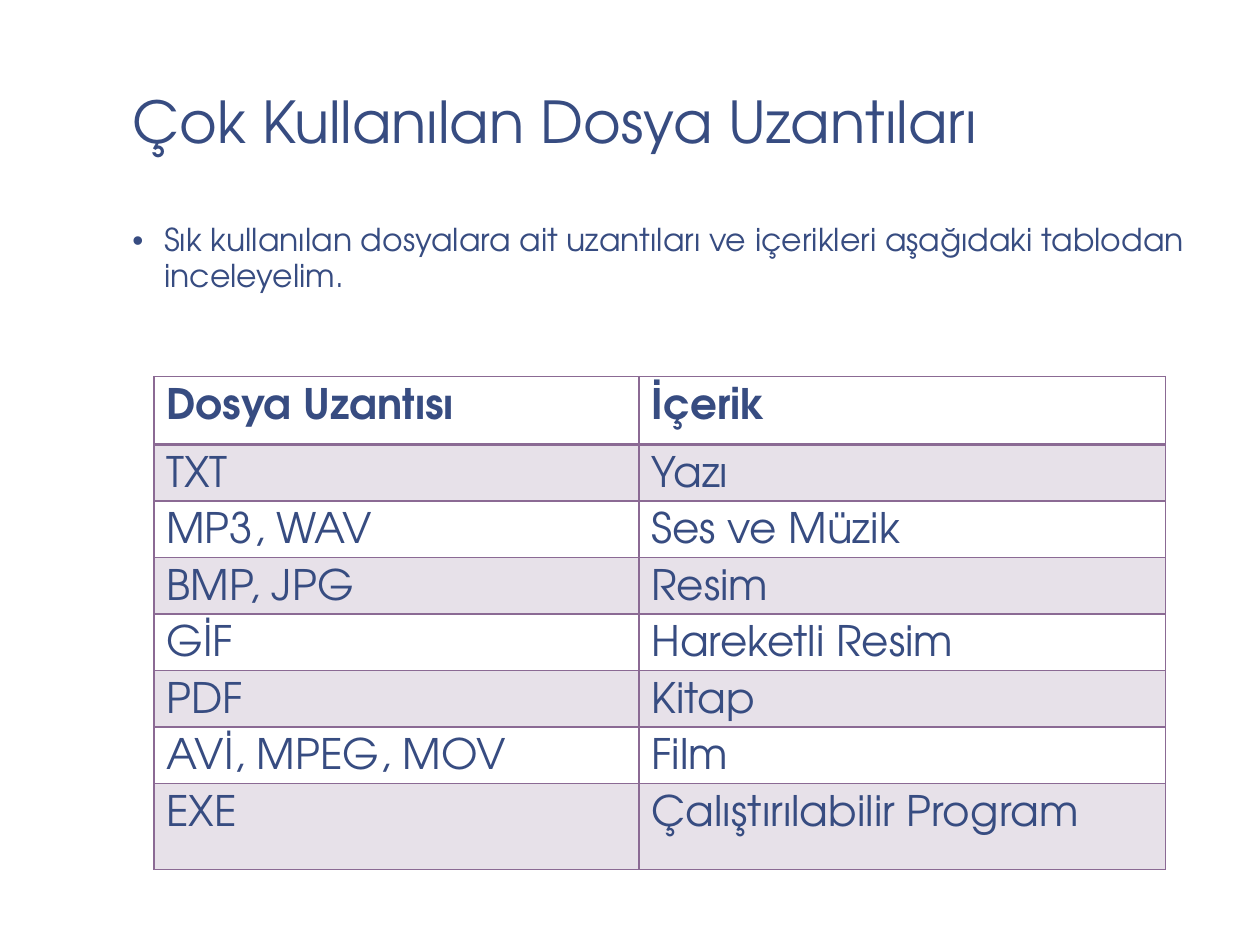
import pptx
import pptx.util
import pptx.dml.color
import pptx.enum.text
import pptx.oxml.ns
from lxml import etree
from pptx.util import Cm, Pt

TITLE = "Çok Kullanılan Dosya Uzantıları"
INTRO = "Sık kullanılan dosyalara ait uzantıları ve içerikleri aşağıdaki tablodan inceleyelim."
ROWS = [
    ("Dosya Uzantısı", "İçerik"),
    ("TXT", "Yazı"),
    ("MP3, WAV", "Ses ve Müzik"),
    ("BMP, JPG", "Resim"),
    ("GİF", "Hareketli Resim"),
    ("PDF", "Kitap"),
    ("AVİ, MPEG, MOV", "Film"),
    ("EXE", "Çalıştırılabilir Program"),
]
COL_WIDTHS = [9.78, 10.62]
ROW_HEIGHTS = [1.37] + [1.14] * 6 + [1.73]

FONT = "TeX Gyre Adventor"
INK = "374C81"
PURPLE = "8B6A94"


def color(hex_text):
    return pptx.dml.color.RGBColor.from_string(hex_text)


def add(parent, tag, **attrs):
    return etree.SubElement(parent, pptx.oxml.ns.qn(tag), **attrs)


def set_font(p, size, bold=False):
    p.font.name = FONT
    p.font.size = Pt(size)
    p.font.bold = bold
    p.font.color.rgb = color(INK)


def set_frame(tf, anchor):
    tf.word_wrap = True
    tf.auto_size = pptx.enum.text.MSO_AUTO_SIZE.NONE
    tf.vertical_anchor = anchor
    tf.margin_left = tf.margin_right = Cm(0.33)
    tf.margin_top = tf.margin_bottom = Cm(0.18)


def set_borders(cell, widths):
    """Draw the left, right, top and bottom borders, with widths in points."""
    tc_pr = cell._tc.get_or_add_tcPr()
    for side, width in zip("LRTB", widths):
        ln = add(tc_pr, f"a:ln{side}", w=str(Pt(width)))
        add(add(ln, "a:solidFill"), "a:srgbClr", val=PURPLE)


def fill_cell(cell, tinted):
    if not tinted:
        cell.fill.background()
        return
    cell.fill.solid()
    cell.fill.fore_color.rgb = color(PURPLE)
    fill = cell._tc.tcPr.find(pptx.oxml.ns.qn("a:solidFill"))
    add(fill[0], "a:alpha", val="20000")


def add_title(s):
    title = s.shapes.title
    title.left, title.top, title.width, title.height = Cm(2.34), Cm(0.2), Cm(21.16), Cm(3.12)
    set_frame(title.text_frame, pptx.enum.text.MSO_ANCHOR.BOTTOM)
    p = title.text_frame.paragraphs[0]
    p.text = TITLE
    p.alignment = pptx.enum.text.PP_ALIGN.LEFT
    p.line_spacing = 0.85
    set_font(p, 33)


def add_intro(s):
    box = s.shapes.add_textbox(Cm(2.34), Cm(4.32), Cm(22.38), Cm(2.59))
    set_frame(box.text_frame, pptx.enum.text.MSO_ANCHOR.TOP)
    p = box.text_frame.paragraphs[0]
    p.text = INTRO
    p.line_spacing = 0.95
    p_pr = p._p.get_or_add_pPr()
    p_pr.set("marL", str(Cm(0.64)))
    p_pr.set("indent", str(-Cm(0.64)))
    add(p_pr, "a:buFont", typeface="Arial")
    add(p_pr, "a:buChar", char="•")
    set_font(p, 18)


def add_extension_table(s):
    frame = s.shapes.add_table(len(ROWS), len(COL_WIDTHS), Cm(3.1), Cm(7.59),
                               Cm(sum(COL_WIDTHS)), Cm(sum(ROW_HEIGHTS)))
    table = frame.table
    for column, width in zip(table.columns, COL_WIDTHS):
        column.width = Cm(width)
    for i, (row, height) in enumerate(zip(table.rows, ROW_HEIGHTS)):
        row.height = Cm(height)
        for cell, text in zip(row.cells, ROWS[i]):
            # The top margin keeps the dot of a capital İ inside its cell.
            cell.margin_top, cell.margin_bottom = Cm(0.24), 0
            p = cell.text_frame.paragraphs[0]
            p.text = text
            set_font(p, 24, bold=i == 0)
            set_borders(cell, (1, 1, 2 if i == 1 else 1, 2 if i == 0 else 1))
            fill_cell(cell, tinted=i % 2 == 1)


def main():
    prs = pptx.Presentation()
    prs.slide_width, prs.slide_height = Cm(25.4), Cm(19.05)
    s = prs.slides.add_slide(prs.slide_layouts[5])
    add_title(s)
    add_intro(s)
    add_extension_table(s)
    prs.save("out.pptx")


if __name__ == "__main__":
    main()
